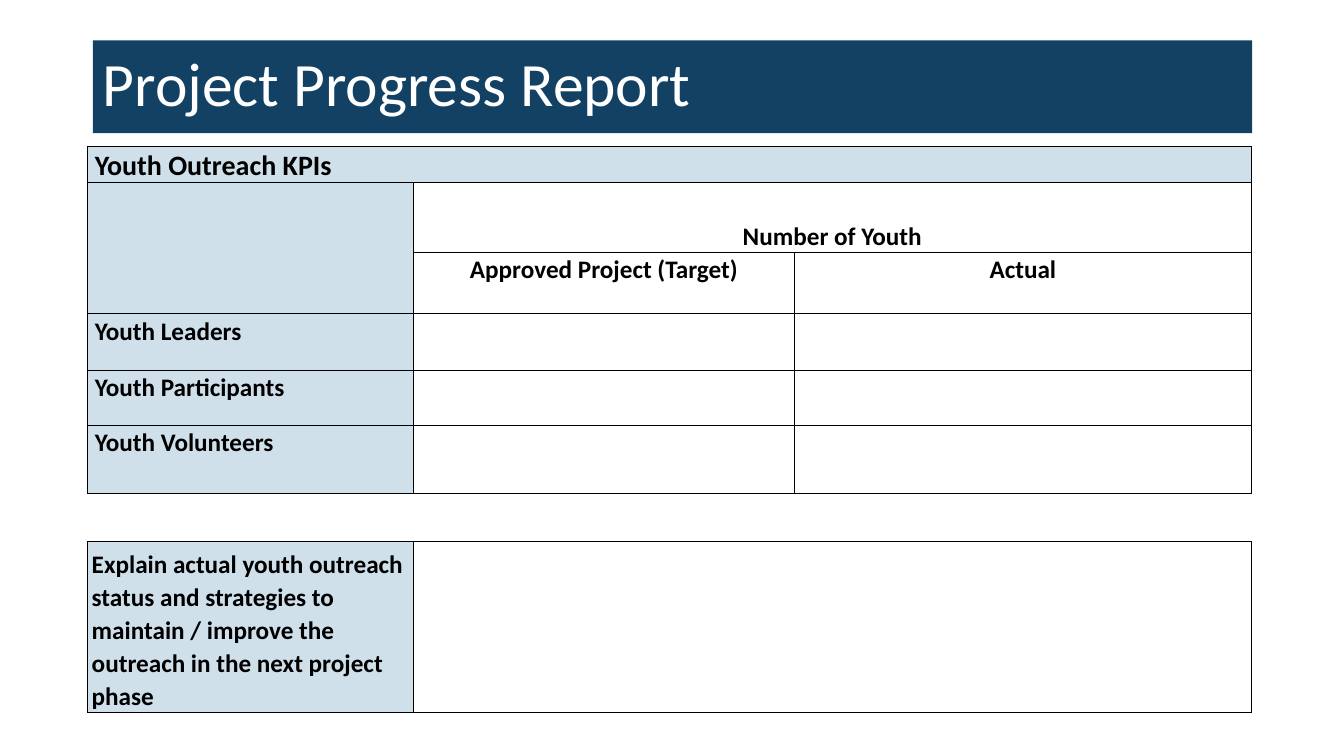
from dataclasses import dataclass

from lxml import etree
from pptx import Presentation
from pptx.dml.color import RGBColor
from pptx.enum import text as t
from pptx.oxml import ns
from pptx.util import Inches, Pt


@dataclass(frozen=True)
class Theme:
    font: str = "Calibri"
    navy: str = "134163"
    pale: str = "CFE0EA"
    black: str = "000000"
    white: str = "FFFFFF"
    title: int = 44
    heading: int = 20
    body: int = 18


theme = Theme()


def write(tf, text, size=theme.body, color=theme.black, bold=True,
          align=t.PP_ALIGN.LEFT, spacing=1.07, after=0):
    p = tf.paragraphs[0]
    p.alignment, p.line_spacing, p.space_after = align, spacing, Pt(after)
    r = p.add_run()
    r.text = text
    r.font.name, r.font.size, r.font.bold = theme.font, Pt(size), bold
    r.font.color.rgb = RGBColor.from_string(color)


def set_borders(cell, drawn):
    """Draw the named edges (letters from LRTB) and clear the others."""
    tc_pr = cell._tc.get_or_add_tcPr()
    for edge in "LRTB":
        ln = etree.SubElement(tc_pr, ns.qn(f"a:ln{edge}"), w=str(Pt(1)))
        if edge in drawn:
            fill = etree.SubElement(ln, ns.qn("a:solidFill"))
            etree.SubElement(fill, ns.qn("a:srgbClr"), val=theme.black)
        else:
            etree.SubElement(ln, ns.qn("a:noFill"))


prs = Presentation()
prs.slide_width, prs.slide_height = Inches(13.33), Inches(7.5)
s = prs.slides.add_slide(prs.slide_layouts[5])

# Title band
title = s.shapes.title
title.left, title.top = Inches(0.92), Inches(0.4)
title.width, title.height = Inches(11.5), Inches(0.92)
title.fill.solid()
title.fill.fore_color.rgb = RGBColor.from_string(theme.navy)
title.text_frame.vertical_anchor = t.MSO_ANCHOR.MIDDLE
title.text_frame.auto_size = t.MSO_AUTO_SIZE.NONE
write(title.text_frame, "Project Progress Report", size=theme.title,
      color=theme.white, bold=False, spacing=0.9)

# KPI table: a blank row separates the figures from the explanation
col_widths = [3.23, 3.78, 4.53]
row_heights = [0.33, 0.69, 0.61, 0.56, 0.55, 0.67, 0.48, 1.65]
gap_row, explain_row = 6, 7
frame = s.shapes.add_table(len(row_heights), len(col_widths), Inches(0.87),
                           Inches(1.45), Inches(sum(col_widths)),
                           Inches(sum(row_heights)))
table = frame.table
table.first_row = table.horz_banding = False
for col, width in zip(table.columns, col_widths):
    col.width = Inches(width)
for row, height in zip(table.rows, row_heights):
    row.height = Inches(height)

for i, row in enumerate(table.rows):
    for j, cell in enumerate(row.cells):
        set_borders(cell, "TB" if i == gap_row else "LRTB")
        if i == 0 or (j == 0 and i != gap_row):
            cell.fill.solid()
            cell.fill.fore_color.rgb = RGBColor.from_string(theme.pale)
        else:
            cell.fill.background()

merges = [((0, 0), (0, 2)), ((1, 0), (2, 0)), ((1, 1), (1, 2)),
          ((gap_row, 1), (gap_row, 2)), ((explain_row, 1), (explain_row, 2))]
for first, last in merges:
    table.cell(*first).merge(table.cell(*last))

top, bottom = t.MSO_ANCHOR.TOP, t.MSO_ANCHOR.BOTTOM
center = {"align": t.PP_ALIGN.CENTER}
labels = [
    (0, 0, "Youth Outreach KPIs", bottom, {"size": theme.heading}),
    (1, 1, "Number of Youth", bottom, center),
    (2, 1, "Approved Project (Target)", top, center),
    (2, 2, "Actual", top, center),
    (3, 0, "Youth Leaders", top, {}),
    (4, 0, "Youth Participants", top, {}),
    (5, 0, "Youth Volunteers", top, {}),
    (explain_row, 0, "Explain actual youth outreach status and strategies to "
     "maintain / improve the outreach in the next project phase",
     t.MSO_ANCHOR.MIDDLE, {"after": 8}),
]
for i, j, text, anchor, style in labels:
    cell = table.cell(i, j)
    cell.vertical_anchor = anchor
    cell.margin_left = cell.margin_right = Inches(0.07)
    cell.margin_top = cell.margin_bottom = 0
    write(cell.text_frame, text, **style)

explain = table.cell(explain_row, 0)
explain.margin_left, explain.margin_right = Inches(0.04), Inches(0.02)
explain.margin_top = Inches(0.06)

prs.save("out.pptx")
